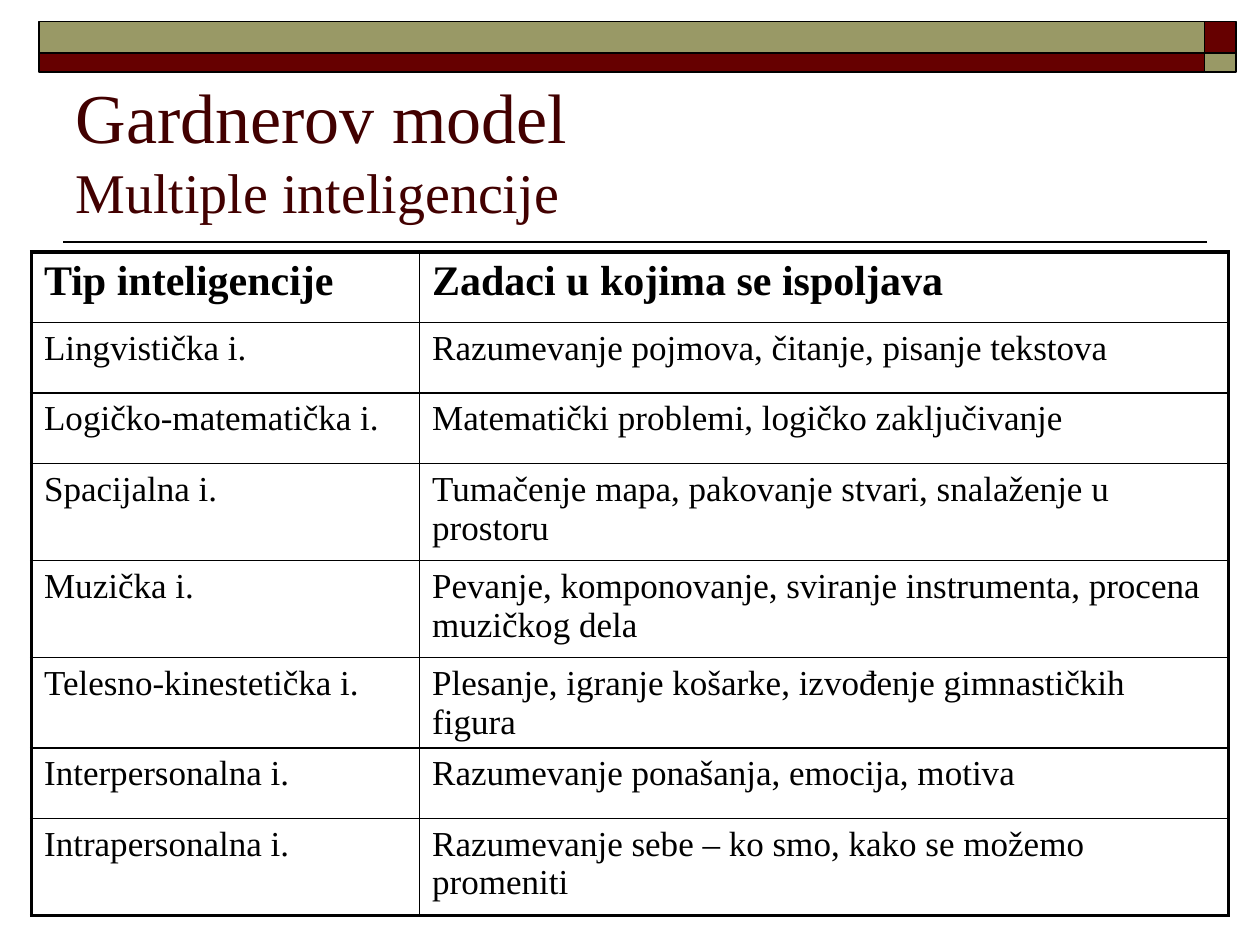
from lxml import etree
from pptx import Presentation
from pptx.dml.color import RGBColor
from pptx.enum import shapes, text
from pptx.oxml.ns import qn
from pptx.util import Inches, Pt

FONT = "Times New Roman"
COLORS = {"maroon": "660000", "olive": "999966", "title": "420000",
          "ink": "000000", "paper": "FFFFFF"}
HEADING = [("Gardnerov model", 40), ("Multiple inteligencije", 32)]
INTELLIGENCES = [
    ("Tip inteligencije", "Zadaci u kojima se ispoljava"),
    ("Lingvistička i.", "Razumevanje pojmova, čitanje, pisanje tekstova"),
    ("Logičko-matematička i.", "Matematički problemi, logičko zaključivanje"),
    ("Spacijalna i.", "Tumačenje mapa, pakovanje stvari, snalaženje u prostoru"),
    ("Muzička i.", "Pevanje, komponovanje, sviranje instrumenta, procena muzičkog dela"),
    ("Telesno-kinestetička i.", "Plesanje, igranje košarke, izvođenje gimnastičkih figura"),
    ("Interpersonalna i.", "Razumevanje ponašanja, emocija, motiva"),
    ("Intrapersonalna i.", "Razumevanje sebe – ko smo, kako se možemo promeniti"),
]
COLUMN_WIDTHS = [3.08, 6.42]
ROW_HEIGHTS = [0.56, 0.56, 0.56, 0.77, 0.77, 0.56, 0.56, 0.77]
BAND_COLUMNS = [(0.31, 9.25), (9.56, 0.25)]
BAND_ROWS = [(0.17, 0.25, ("olive", "maroon")), (0.42, 0.15, ("maroon", "olive"))]


def rgb(name):
    return RGBColor.from_string(COLORS[name])


def add_run(paragraph, words, size, color, bold=False):
    run = paragraph.add_run()
    run.text = words
    run.font.name = FONT
    run.font.size = Pt(size)
    run.font.bold = bold
    run.font.color.rgb = rgb(color)


def set_borders(cell, widths):
    properties = cell._tc.get_or_add_tcPr()
    for index, (side, width) in enumerate(widths.items()):
        border = etree.Element(qn(f"a:ln{side}"), w=str(Pt(width)))
        fill = etree.SubElement(border, qn("a:solidFill"))
        etree.SubElement(fill, qn("a:srgbClr"), val=COLORS["ink"])
        properties.insert(index, border)


def add_bands(slide):
    for top, height, colors in BAND_ROWS:
        for (left, width), color in zip(BAND_COLUMNS, colors):
            band = slide.shapes.add_shape(
                shapes.MSO_SHAPE.RECTANGLE,
                Inches(left), Inches(top), Inches(width), Inches(height))
            band.shadow.inherit = False
            band.fill.solid()
            band.fill.fore_color.rgb = rgb(color)
            band.line.color.rgb = rgb("ink")
            band.line.width = Pt(1)


def add_rule(slide):
    rule = slide.shapes.add_connector(
        shapes.MSO_CONNECTOR.STRAIGHT,
        Inches(9.58), Inches(1.92), Inches(0.5), Inches(1.92))
    rule.line.color.rgb = rgb("ink")
    rule.line.width = Pt(1)
    etree.SubElement(rule._element.spPr, qn("a:effectLst"))


def fill_title(slide):
    title = slide.shapes.title
    title.left, title.top = Inches(0.5), Inches(0.58)
    title.width, title.height = Inches(9), Inches(1.25)
    frame = title.text_frame
    frame.word_wrap = True
    frame.auto_size = text.MSO_AUTO_SIZE.NONE
    frame.vertical_anchor = text.MSO_ANCHOR.BOTTOM
    paragraph = frame.paragraphs[0]
    paragraph.alignment = text.PP_ALIGN.LEFT
    for index, (words, size) in enumerate(HEADING):
        if index:
            paragraph.add_line_break()
        add_run(paragraph, words, size, "title")


def add_intelligences(slide):
    last_row, last_column = len(INTELLIGENCES) - 1, len(COLUMN_WIDTHS) - 1
    table = slide.shapes.add_table(
        len(INTELLIGENCES), len(COLUMN_WIDTHS), Inches(0.25), Inches(2),
        Inches(sum(COLUMN_WIDTHS)), Inches(sum(ROW_HEIGHTS))).table
    table.horz_banding = False
    for column, width in zip(table.columns, COLUMN_WIDTHS):
        column.width = Inches(width)
    for r, (row, height) in enumerate(zip(table.rows, ROW_HEIGHTS)):
        row.height = Inches(height)
        for c, words in enumerate(INTELLIGENCES[r]):
            cell = table.cell(r, c)
            cell.fill.solid()
            cell.fill.fore_color.rgb = rgb("paper")
            add_run(cell.text_frame.paragraphs[0], words,
                    20 if r else 24, "ink", bold=r == 0)
            outer = {"L": c == 0, "R": c == last_column,
                     "T": r == 0, "B": r == last_row}
            set_borders(cell, {side: 2.25 if edge else 1
                               for side, edge in outer.items()})


def main():
    deck = Presentation()
    deck.slide_width, deck.slide_height = Inches(10), Inches(7.5)
    slide = deck.slides.add_slide(deck.slide_layouts[5])
    add_rule(slide)
    add_bands(slide)
    fill_title(slide)
    add_intelligences(slide)
    deck.save("out.pptx")


if __name__ == "__main__":
    main()
